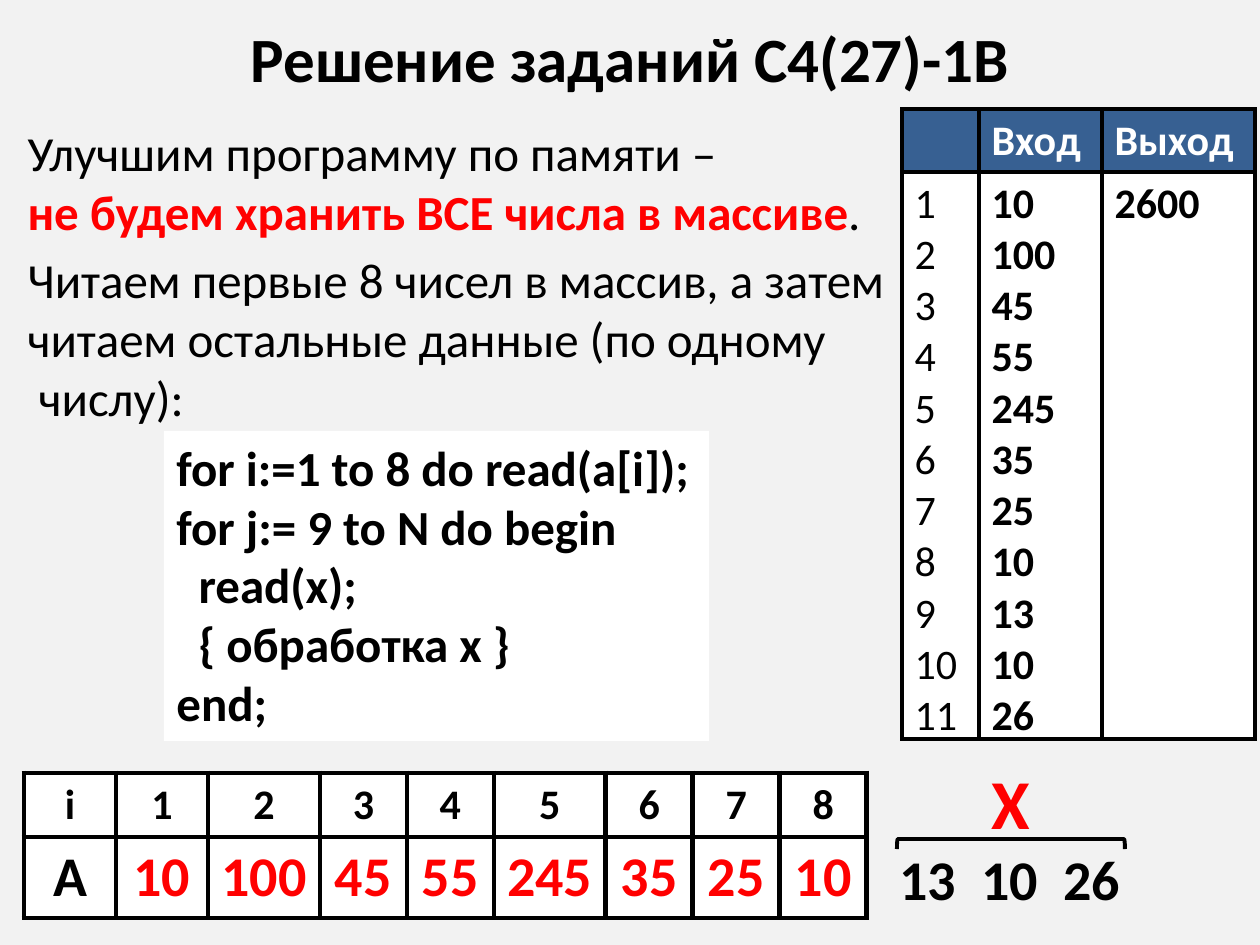
from lxml.etree import SubElement
from pptx import Presentation
from pptx.dml.color import RGBColor
from pptx.enum.shapes import MSO_SHAPE as SHAPE
from pptx.enum.text import MSO_ANCHOR as ANCHOR, MSO_AUTO_SIZE as AUTO, PP_ALIGN as ALIGN
from pptx.oxml.ns import qn
from pptx.util import Emu, Pt

BLACK = RGBColor(0, 0, 0)
WHITE = RGBColor(255, 255, 255)
RED = RGBColor(255, 0, 0)
BLUE = RGBColor(0x37, 0x60, 0x92)
GRAY = RGBColor(0xF2, 0xF2, 0xF2)
INPUT = [10, 100, 45, 55, 245, 35, 25, 10, 13, 10, 26]
STORED = 8
CODE = """for i:=1 to 8 do read(a[i]);
for j:= 9 to N do begin
  read(x);
  { обработка x }
end;"""


def px(n):
    return Emu(round(n * 914400 / 126))


def place(sp, x, y, w, h):
    sp.left, sp.top, sp.width, sp.height = px(x), px(y), px(w), px(h)


def style(p, size, color=BLACK, bold=True, align=ALIGN.LEFT):
    f = p.font
    f.name, f.size, f.bold = "Calibri", Pt(size), bold
    f.color.rgb = color
    p.alignment = align


def fill_text(tf, text, size, color=BLACK, bold=True, align=ALIGN.LEFT):
    tf.text = text
    for p in tf.paragraphs:
        style(p, size, color, bold, align)


def add_title(s, x, y, w, h):
    sp = s.shapes.title
    place(sp, x, y, w, h)
    tf = sp.text_frame
    tf.auto_size = AUTO.NONE
    tf.vertical_anchor = ANCHOR.MIDDLE
    fill_text(tf, "Решение заданий С4(27)-1В", 36, align=ALIGN.CENTER)


def add_body(s, x, y, w, h):
    sp = s.placeholders[1]
    place(sp, x, y, w, h)
    tf = sp.text_frame
    tf.auto_size = AUTO.NONE
    tf.text = ("Улучшим программу по памяти – \v\n"
               "Читаем первые 8 чисел в массив, а затем\v"
               "читаем остальные данные (по одному\v числу):")
    for p in tf.paragraphs:
        style(p, 28, bold=False)
        p.space_before = Pt(5.6)
        pPr = p._p.get_or_add_pPr()
        pPr.set("marL", "0")
        pPr.set("indent", "0")
        pPr.insert_element_before(pPr.makeelement(qn("a:buNone")), "a:tabLst", "a:defRPr")
    p = tf.paragraphs[0]
    r = p.add_run()
    r.text = "не будем хранить ВСЕ числа в массиве"
    r.font.bold = True
    r.font.color.rgb = RED
    p.add_run().text = "."


def add_code(s, x, y, w, h):
    sp = s.shapes.add_shape(SHAPE.RECTANGLE, px(x), px(y), px(w), px(h))
    sp.shadow.inherit = False
    sp.fill.solid()
    sp.fill.fore_color.rgb = WHITE
    sp.line.fill.background()
    tf = sp.text_frame
    tf.word_wrap = True
    tf.vertical_anchor = ANCHOR.TOP
    fill_text(tf, CODE, 28)


def set_borders(cell, width):
    tcPr = cell._tc.get_or_add_tcPr()
    for i, side in enumerate(("lnL", "lnR", "lnT", "lnB")):
        ln = tcPr.makeelement(qn(f"a:{side}"), w=str(Pt(width)))
        SubElement(SubElement(ln, qn("a:solidFill")), qn("a:srgbClr"), val=str(BLACK))
        tcPr.insert(i, ln)


def add_grid(s, x, y, cols, rows, border):
    frame = s.shapes.add_table(len(rows), len(cols), px(x), px(y), px(sum(cols)), px(sum(rows)))
    table = frame.table
    table.first_row = table.horz_banding = False
    for col, w in zip(table.columns, cols):
        col.width = px(w)
    for row, h in zip(table.rows, rows):
        row.height = px(h)
    for cell in table.iter_cells():
        cell.fill.solid()
        cell.fill.fore_color.rgb = WHITE
        set_borders(cell, border)
    return table


def add_array(s, x, y):
    cols = [92, 92, 112, 87, 87, 112, 87, 87, 87]
    table = add_grid(s, x, y, cols, [63, 80], 3)
    heads = ["i", *range(1, STORED + 1)]
    values = ["A", *INPUT[:STORED]]
    for c, (head, value) in enumerate(zip(heads, values)):
        fill_text(table.cell(0, c).text_frame, str(head), 24, align=ALIGN.CENTER)
        cell = table.cell(1, c)
        cell.vertical_anchor = ANCHOR.MIDDLE if c else ANCHOR.TOP
        fill_text(cell.text_frame, str(value), 32, RED if c else BLACK, align=ALIGN.CENTER)


def add_data(s, x, y):
    table = add_grid(s, x, y, [77, 123, 153], [63, 567], 2.25)
    numbers = "\n".join(str(n + 1) for n in range(len(INPUT)))
    columns = [("", numbers, False),
               ("Вход", "\n".join(map(str, INPUT)), True),
               ("Выход", "2600", True)]
    for c, (head, body, bold) in enumerate(columns):
        cell = table.cell(0, c)
        cell.fill.fore_color.rgb = BLUE
        fill_text(cell.text_frame, head, 24, WHITE)
        fill_text(table.cell(1, c).text_frame, body, 24, bold=bold)


def add_label(s, text, size, color, x, y, w, h):
    tf = s.shapes.add_textbox(px(x), px(y), px(w), px(h)).text_frame
    tf.word_wrap = False
    fill_text(tf, text, size, color)


def add_rest(s, x, y):
    length, depth = 228, 10
    left, top = x + 10 + (length - depth) // 2, y + 86 - (length - depth) // 2
    sp = s.shapes.add_shape(SHAPE.RIGHT_BRACKET, px(left), px(top), px(depth), px(length))
    sp.rotation = 270
    sp.shadow.inherit = False
    sp.fill.background()
    sp.line.color.rgb = BLACK
    sp.line.width = Pt(2.25)
    add_label(s, "X", 40, RED, x + 92, y, 64, 97)
    rest = "  ".join(map(str, INPUT[STORED:]))
    add_label(s, rest, 32, BLACK, x, y + 85, 249, 81)


def main():
    prs = Presentation()
    prs.slide_width, prs.slide_height = px(1260), px(945)
    s = prs.slides.add_slide(prs.slide_layouts[1])
    s.background.fill.solid()
    s.background.fill.fore_color.rgb = GRAY
    add_title(s, 63, 8, 1134, 98)
    add_body(s, 15, 116, 1230, 814)
    add_code(s, 164, 431, 545, 310)
    add_array(s, 24, 773)
    add_rest(s, 887, 753)
    add_data(s, 902, 109)
    prs.save("out.pptx")


if __name__ == "__main__":
    main()
